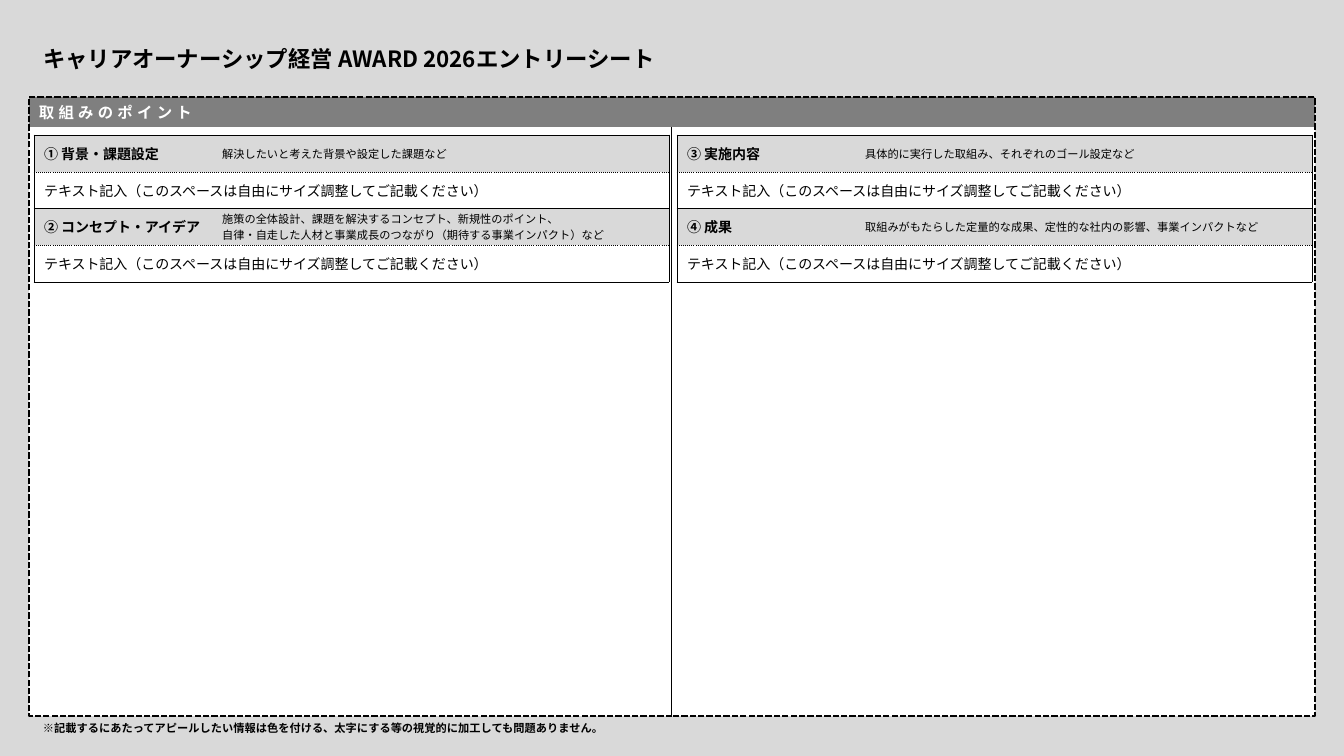
"""Build the award entry sheet slide with two framed tables."""
import pptx
import pptx.dml.color
import pptx.enum.dml
import pptx.enum.shapes
import pptx.enum.text
import pptx.oxml
import pptx.oxml.ns
import pptx.util

TITLE = "キャリアオーナーシップ経営 AWARD 2026エントリーシート"
BAND = "取組みのポイント"
FOOTNOTE = "※記載するにあたってアピールしたい情報は色を付ける、太字にする等の視覚的に加工しても問題ありません。"
ENTRY = "テキスト記入（このスペースは自由にサイズ調整してご記載ください）"
TABLES = [
    [
        ("① 背景・課題設定", ["解決したいと考えた背景や設定した課題など"]),
        ("② コンセプト・アイデア", [
            "施策の全体設計、課題を解決するコンセプト、新規性のポイント、",
            "自律・自走した人材と事業成長のつながり（期待する事業インパクト）など",
        ]),
    ],
    [
        ("③ 実施内容", ["具体的に実行した取組み、それぞれのゴール設定など"]),
        ("④ 成果", ["取組みがもたらした定量的な成果、定性的な社内の影響、事業インパクトなど"]),
    ],
]

FONT = "Noto Sans CJK JP"
BLACK, WHITE, PALE, GREY = "000000", "FFFFFF", "D9D9D9", "7F7F7F"
SLIDE_WIDTH, SLIDE_HEIGHT = 1344, 756
FRAME_LEFT, FRAME_TOP, FRAME_WIDTH, FRAME_HEIGHT = 29, 97, 1286, 619
BAND_HEIGHT = 30
TEXT_LEFT = 33
TABLE_LEFT, TABLE_TOP, TABLE_STEP = 34, 135, 643
COLUMN_WIDTHS = [178, 457]
ROW_HEIGHTS = [37, 36, 37, 37]
CELL_MARGIN = 2


def px(length):
    return pptx.util.Emu(round(length * 914400 / 100.8))


def box(*lengths):
    return [px(length) for length in lengths]


def color(value):
    return pptx.dml.color.RGBColor.from_string(value)


def write(text_frame, lines, size, bold=False, ink=BLACK, spacing=None):
    paragraph = text_frame.paragraphs[0]
    paragraph.alignment = pptx.enum.text.PP_ALIGN.LEFT
    paragraph.line_spacing = 1.0
    for index, line in enumerate(lines):
        if index:
            paragraph.add_line_break()
        run = paragraph.add_run()
        run.text = line
        run.font.size = pptx.util.Pt(size)
        run.font.bold = bold
        run.font.color.rgb = color(ink)
        run.font.name = FONT
        properties = run.font._element
        east_asian = pptx.oxml.parse_xml(
            f'<a:ea {pptx.oxml.ns.nsdecls("a")} typeface="{FONT}"/>')
        properties.find(pptx.oxml.ns.qn("a:latin")).addnext(east_asian)
        if spacing:
            properties.set("spc", str(spacing * 100))


def add_rectangle(slide, top, height, fill=None):
    shape = slide.shapes.add_shape(
        pptx.enum.shapes.MSO_SHAPE.RECTANGLE,
        *box(FRAME_LEFT, top, FRAME_WIDTH, height))
    shape.shadow.inherit = False
    shape.line.fill.background()
    if fill:
        shape.fill.solid()
        shape.fill.fore_color.rgb = color(fill)
    else:
        shape.fill.background()
    return shape


def add_frame(slide):
    add_rectangle(slide, FRAME_TOP, FRAME_HEIGHT, WHITE)
    band = add_rectangle(slide, FRAME_TOP, BAND_HEIGHT, GREY)
    band.text_frame.vertical_anchor = pptx.enum.text.MSO_ANCHOR.MIDDLE
    write(band.text_frame, [BAND], 11, True, WHITE, 3)
    outline = add_rectangle(slide, FRAME_TOP, FRAME_HEIGHT)
    outline.line.color.rgb = color(BLACK)
    outline.line.width = pptx.util.Pt(1.5)
    outline.line.dash_style = pptx.enum.dml.MSO_LINE.SQUARE_DOT
    outline.line._ln.find(pptx.oxml.ns.qn("a:prstDash")).set("val", "sysDash")
    middle = SLIDE_WIDTH / 2
    divider = slide.shapes.add_connector(
        pptx.enum.shapes.MSO_CONNECTOR.STRAIGHT,
        *box(middle, FRAME_TOP + BAND_HEIGHT, middle, FRAME_TOP + FRAME_HEIGHT))
    divider.line.color.rgb = color(BLACK)
    divider.line.width = pptx.util.Pt(0.75)
    divider._element.spPr.append(
        pptx.oxml.parse_xml(f'<a:effectLst {pptx.oxml.ns.nsdecls("a")}/>'))


def style_cell(cell, fill, left, right, top, bottom):
    cell.vertical_anchor = pptx.enum.text.MSO_ANCHOR.MIDDLE
    cell.margin_top = cell.margin_bottom = px(CELL_MARGIN)
    properties = cell._tc.get_or_add_tcPr()
    for side, dash in zip("LRTB", (left, right, top, bottom)):
        paint = (f'<a:solidFill><a:srgbClr val="{BLACK}"/></a:solidFill>'
                 f'<a:prstDash val="{dash}"/>' if dash else "<a:noFill/>")
        properties.append(pptx.oxml.parse_xml(
            f'<a:ln{side} {pptx.oxml.ns.nsdecls("a")} w="6350">{paint}</a:ln{side}>'))
    cell.fill.solid()
    cell.fill.fore_color.rgb = color(fill)


def add_entry_table(slide, left, sections):
    table = slide.shapes.add_table(
        len(ROW_HEIGHTS), len(COLUMN_WIDTHS),
        *box(left, TABLE_TOP, sum(COLUMN_WIDTHS), sum(ROW_HEIGHTS))).table
    table.first_row = table.horz_banding = False
    for column, width in zip(table.columns, COLUMN_WIDTHS):
        column.width = px(width)
    for row, height in zip(table.rows, ROW_HEIGHTS):
        row.height = px(height)
    for index, (heading, hint) in enumerate(sections):
        head, entry = 2 * index, 2 * index + 1
        for column, (left_line, right_line) in enumerate([("solid", None), (None, "solid")]):
            style_cell(table.cell(head, column), PALE,
                       left_line, right_line, "solid", "sysDot")
            style_cell(table.cell(entry, column), WHITE,
                       "solid", "solid", "sysDot", "solid")
        table.cell(entry, 0).merge(table.cell(entry, 1))
        write(table.cell(head, 0).text_frame, [heading], 10, True)
        write(table.cell(head, 1).text_frame, hint, 8)
        write(table.cell(entry, 0).text_frame, [ENTRY], 10)


def main():
    presentation = pptx.Presentation()
    presentation.slide_width, presentation.slide_height = box(SLIDE_WIDTH, SLIDE_HEIGHT)
    slide = presentation.slides.add_slide(presentation.slide_layouts[5])
    slide.background.fill.solid()
    slide.background.fill.fore_color.rgb = color(PALE)

    add_frame(slide)
    for index, sections in enumerate(TABLES):
        add_entry_table(slide, TABLE_LEFT + index * TABLE_STEP, sections)

    title = slide.shapes.title
    title.left, title.top, title.width, title.height = box(TEXT_LEFT, 40, 652, 37)
    footnote = slide.shapes.add_textbox(*box(TEXT_LEFT, 716, 597, 24))
    for shape, text, size in ((title, TITLE, 16), (footnote, FOOTNOTE, 8)):
        shape.text_frame.word_wrap = False
        shape.text_frame.auto_size = pptx.enum.text.MSO_AUTO_SIZE.NONE
        shape.text_frame.vertical_anchor = pptx.enum.text.MSO_ANCHOR.MIDDLE
        write(shape.text_frame, [text], size, True)

    presentation.save("out.pptx")


if __name__ == "__main__":
    main()
